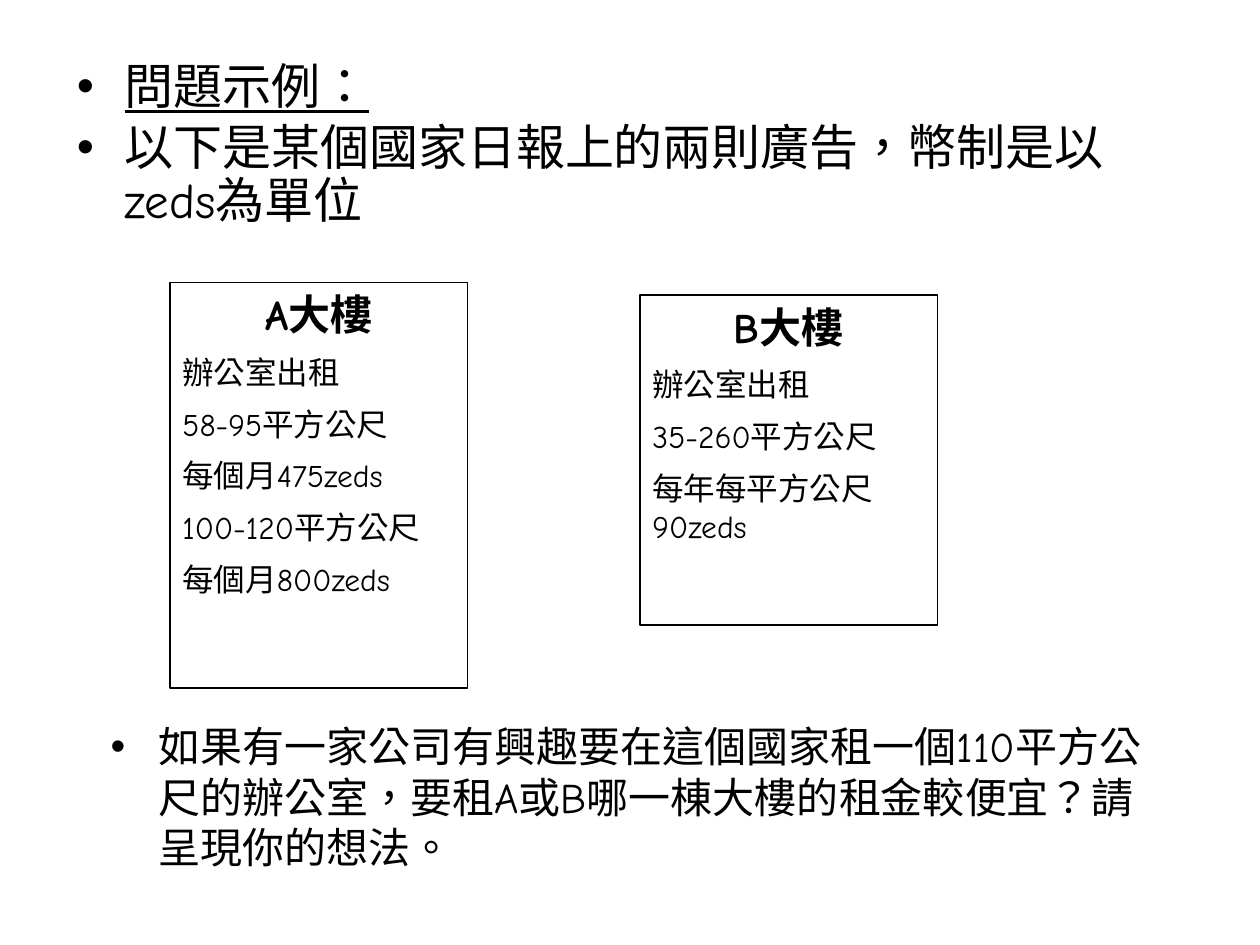
from dataclasses import dataclass

import pptx
import pptx.dml.color
import pptx.enum.lang
import pptx.enum.shapes
import pptx.enum.text
import pptx.oxml.xmlchemy
import pptx.util
from lxml import etree
from pptx.oxml.ns import qn

PX = 9144


@dataclass(frozen=True)
class Theme:
    font: str = "Comic Neue"
    ink: pptx.dml.color.RGBColor = pptx.dml.color.RGBColor(0, 0, 0)
    paper: pptx.dml.color.RGBColor = pptx.dml.color.RGBColor(255, 255, 255)
    intro: int = 28
    heading: int = 24
    question: int = 24
    detail: int = 18
    border: float = 0.75


THEME = Theme()


def px(length):
    return pptx.util.Emu(length * PX)


def place(shape, box):
    shape.left, shape.top, shape.width, shape.height = map(px, box)


def prepare_frame(frame):
    frame.word_wrap = True
    frame.auto_size = pptx.enum.text.MSO_AUTO_SIZE.NONE
    frame.vertical_anchor = pptx.enum.text.MSO_ANCHOR.TOP


def add_bullet(paragraph):
    properties = paragraph._p.get_or_add_pPr()
    properties.set("marL", str(px(38)))
    properties.set("indent", str(px(-38)))
    etree.SubElement(properties, qn("a:buFont")).set("typeface", "Arial")
    etree.SubElement(properties, qn("a:buChar")).set("char", "•")


def write_paragraphs(frame, lines, size, space, bulleted=False):
    prepare_frame(frame)
    for index, line in enumerate(lines):
        paragraph = frame.add_paragraph() if index else frame.paragraphs[0]
        run = paragraph.add_run()
        run.text = line
        run.font.language_id = pptx.enum.lang.MSO_LANGUAGE_ID.TRADITIONAL_CHINESE
        paragraph.alignment = pptx.enum.text.PP_ALIGN.LEFT
        paragraph.space_before = pptx.util.Pt(space if index else 0)
        if bulleted:
            add_bullet(paragraph)
        paragraph.font.name = THEME.font
        paragraph.font.size = pptx.util.Pt(size)
        paragraph.font.color.rgb = THEME.ink
    return frame.paragraphs


def add_intro(slide, box, lines):
    body = slide.placeholders[1]
    place(body, box)
    paragraphs = write_paragraphs(body.text_frame, lines, THEME.intro, 5, bulleted=True)
    for paragraph in paragraphs:
        paragraph.line_spacing = 0.9
    paragraphs[0].font.underline = True


def add_advertisement(slide, box, heading, details):
    card = slide.shapes.add_shape(
        pptx.enum.shapes.MSO_SHAPE.RECTANGLE, *map(px, box)
    )
    card.shadow.inherit = False
    card.fill.background()
    card.line.color.rgb = THEME.ink
    card.line.width = pptx.util.Pt(THEME.border)
    title = write_paragraphs(
        card.text_frame, [heading, *details], THEME.detail, 8
    )[0]
    title.alignment = pptx.enum.text.PP_ALIGN.CENTER
    title.font.size = pptx.util.Pt(THEME.heading)
    title.font.bold = True


def add_question(slide, box, question):
    text_box = slide.shapes.add_textbox(*map(px, box))
    write_paragraphs(
        text_box.text_frame, [question], THEME.question, 0, bulleted=True
    )


def main():
    presentation = pptx.Presentation()
    presentation.slide_width = px(1000)
    presentation.slide_height = px(750)
    slide = presentation.slides.add_slide(presentation.slide_layouts[1])
    slide.background.fill.solid()
    slide.background.fill.fore_color.rgb = THEME.paper
    title = slide.shapes.title._element
    title.getparent().remove(title)

    add_intro(
        slide,
        (51, 44, 842, 157),
        ["問題示例：", "以下是某個國家日報上的兩則廣告，幣制是以zeds為單位"],
    )
    add_advertisement(
        slide,
        (135, 224, 236, 322),
        "A大樓",
        [
            "辦公室出租",
            "58-95平方公尺",
            "每個月475zeds",
            "100-120平方公尺",
            "每個月800zeds",
        ],
    )
    add_advertisement(
        slide,
        (508, 234, 236, 262),
        "B大樓",
        ["辦公室出租", "35-260平方公尺", "每年每平方公尺90zeds"],
    )
    add_question(
        slide,
        (78, 567, 842, 128),
        "如果有一家公司有興趣要在這個國家租一個110平方公尺的辦公室，"
        "要租A或B哪一棟大樓的租金較便宜？請呈現你的想法。",
    )
    presentation.save("out.pptx")


if __name__ == "__main__":
    main()
